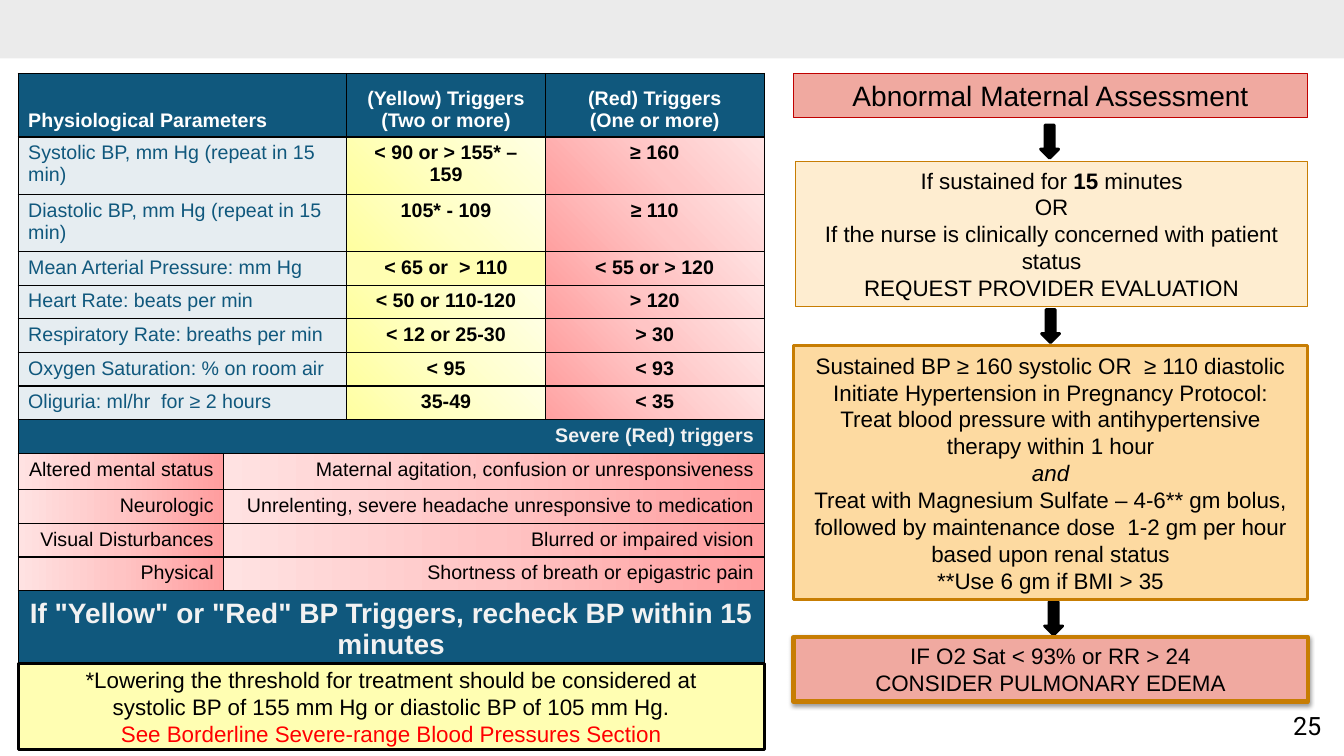
import pptx
import pptx.util
import pptx.dml.color
import pptx.enum.shapes
import pptx.enum.text
import pptx.oxml
import pptx.oxml.ns
from lxml import etree

Inches = pptx.util.Inches
Pt = pptx.util.Pt
RGB = pptx.dml.color.RGBColor
SHAPE = pptx.enum.shapes.MSO_SHAPE
ALIGN = pptx.enum.text.PP_ALIGN
ANCHOR = pptx.enum.text.MSO_ANCHOR
qn = pptx.oxml.ns.qn
NS = pptx.oxml.ns.nsdecls("a")

BLACK = RGB(0, 0, 0)
WHITE = RGB(255, 255, 255)
PALE = RGB(0xF2, 0xF2, 0xF2)
GREY = RGB(0xE3, 0xE3, 0xE3)
NAVY = RGB(0x10, 0x58, 0x7D)
RED = RGB(255, 0, 0)
WINE = RGB(0xC0, 0, 0)
ROSE = RGB(0xF0, 0xA9, 0xA0)
CREAM = RGB(0xFE, 0xED, 0xD0)
PEACH = RGB(0xFD, 0xDA, 0xA1)
AMBER = RGB(0xC7, 0x7D, 0x03)
LEMON = RGB(0xFF, 0xFE, 0xB2)

CIRCLE = '<a:path path="circle"><a:fillToRect l="0" t="100000" r="100000" b="0"/></a:path>'
GLOW = (("FFFFA0", "FFFFC5", "FFFFE3"), '<a:lin ang="18900000" scaled="0"/>')
ALARM = (("FFA0A0", "FFC5C5", "FFE3E3"), CIRCLE)
SEVERE = (("FF9D9E", "FFC4C4", "FFE2E2"), '<a:lin ang="10800000" scaled="0"/>')

HEAD = ("Physiological Parameters", "(Yellow) Triggers\n(Two or more)",
        "(Red) Triggers\n(One or more)")
VITALS = [
    ("Systolic BP, mm Hg (repeat in 15 min)", "< 90 or > 155* – 159", "≥ 160"),
    ("Diastolic BP, mm Hg (repeat in 15 min)", "105* - 109", "≥ 110"),
    ("Mean Arterial Pressure: mm Hg", "< 65 or  > 110", "< 55 or > 120"),
    ("Heart Rate: beats per min", "< 50 or 110-120", "> 120"),
    ("Respiratory Rate: breaths per min", "< 12 or 25-30", "> 30"),
    ("Oxygen Saturation: % on room air", "< 95", "< 93"),
    ("Oliguria: ml/hr  for ≥ 2 hours", "35-49", "< 35"),
]
SIGNS = [
    ("Altered mental status", "Maternal agitation, confusion or unresponsiveness"),
    ("Neurologic", "Unrelenting, severe headache unresponsive to medication"),
    ("Visual Disturbances", "Blurred or impaired vision"),
    ("Physical", "Shortness of breath or epigastric pain"),
]
RECHECK = 'If "Yellow" or "Red" BP Triggers, recheck BP within 15 minutes'


def fade(node, share):
    tone = next(node.iter(qn("a:srgbClr")))
    etree.SubElement(tone, qn("a:alpha")).set("val", str(share * 1000))


def write(para, text, size, color=BLACK, bold=False, italic=False, face="Arial"):
    run = para.add_run()
    run.text = text
    font = run.font
    font.name, font.size = face, Pt(size)
    font.bold, font.italic = bold, italic
    font.color.rgb = color


def lines(frame, rows, size, align=ALIGN.CENTER, **look):
    for i, row in enumerate(rows):
        para = frame.paragraphs[0] if i == 0 else frame.add_paragraph()
        para.alignment = align
        for part in [(row, {})] if isinstance(row, str) else row:
            write(para, part[0], size, **{**look, **part[1]})


def block(slide, kind, box, fill, line=None, width=0):
    shape = slide.shapes.add_shape(kind, *map(Inches, box))
    shape.shadow.inherit = False
    shape.fill.solid()
    shape.fill.fore_color.rgb = fill
    if line is None:
        shape.line.fill.background()
    else:
        shape.line.color.rgb = line
        shape.line.width = Pt(width)
    return shape


def panel(slide, box, fill, line, width, rows, size=16):
    shape = block(slide, SHAPE.RECTANGLE, box, fill, line, width)
    frame = shape.text_frame
    frame.word_wrap = True
    frame.vertical_anchor = ANCHOR.MIDDLE
    lines(frame, rows, size)
    return shape


def paint(cell, fill, share=100):
    props = cell._tc.get_or_add_tcPr()
    if isinstance(fill, RGB):
        cell.fill.solid()
        cell.fill.fore_color.rgb = fill
        if share < 100:
            fade(props, share)
    else:
        tones, way = fill
        stops = "".join(f'<a:gs pos="{i * 50000}"><a:srgbClr val="{tone}"/></a:gs>'
                        for i, tone in enumerate(tones))
        props.append(pptx.oxml.parse_xml(
            f'<a:gradFill {NS} rotWithShape="1"><a:gsLst>{stops}</a:gsLst>{way}</a:gradFill>'))


def border(cell):
    props = cell._tc.get_or_add_tcPr()
    for i, side in enumerate(("lnL", "lnR", "lnT", "lnB")):
        props.insert(i, pptx.oxml.parse_xml(
            f'<a:{side} {NS} w="12700"><a:solidFill><a:srgbClr val="{BLACK}"/>'
            f'</a:solidFill></a:{side}>'))


def grid(slide, box):
    table = slide.shapes.add_table(14, 4, *map(Inches, box)).table
    for col, width in zip(table.columns, (2.04, 1.22, 1.97, 2.17)):
        col.width = Inches(width)
    for i, row in enumerate(table.rows):
        row.height = Inches({0: 0.63, 9: 0.36, 13: 0.54}.get(i, 0.32))

    def put(row, first, last, text, fill, align=ALIGN.CENTER, size=14, share=100, **look):
        cell = table.cell(row, first)
        if last > first:
            cell.merge(table.cell(row, last))
        paint(cell, fill, share)
        lines(cell.text_frame, text.split("\n"), size, align, **look)
        return cell

    spans = ((0, 1, ALIGN.LEFT), (2, 2, ALIGN.CENTER), (3, 3, ALIGN.CENTER))
    for (first, last, align), text in zip(spans, HEAD):
        cell = put(0, first, last, text, NAVY, align, color=WHITE, bold=True)
        cell.vertical_anchor = ANCHOR.BOTTOM
    for row, (name, warn, stop) in enumerate(VITALS, 1):
        put(row, 0, 1, name, NAVY, ALIGN.LEFT, share=10, color=NAVY)
        put(row, 2, 2, warn, LEMON if row == 3 else GLOW, bold=True)
        put(row, 3, 3, stop, ALARM, bold=True)
    put(8, 0, 3, "Severe (Red) triggers", NAVY, ALIGN.RIGHT, color=PALE, bold=True)
    for row, (name, sign) in enumerate(SIGNS, 9):
        put(row, 0, 0, name, SEVERE, ALIGN.RIGHT)
        put(row, 1, 3, sign, SEVERE, ALIGN.RIGHT)
    cell = put(13, 0, 3, RECHECK, NAVY, size=20, color=PALE, bold=True)
    cell.vertical_anchor = ANCHOR.MIDDLE
    for cell in table.iter_cells():
        border(cell)


def flow(slide, box):
    x, y, w = box
    for left, top in ((2.45, 0.51), (2.46, 2.34), (2.49, 5.24)):
        block(slide, SHAPE.DOWN_ARROW, (x + left, y + top, 0.18, 0.33), BLACK, BLACK, 2)
    panel(slide, (x, y, w, 0.44), ROSE, WINE, 0.75, ["Abnormal Maternal Assessment"], 20)
    panel(slide, (x + 0.02, y + 0.87, w - 0.02, 1.44), CREAM, AMBER, 0.75, [
        [("If sustained for ", {}), ("15 ", {"bold": True}), ("minutes", {})],
        "OR",
        "If the nurse is clinically concerned with patient status",
        "REQUEST PROVIDER EVALUATION"])
    panel(slide, (x, y + 2.7, w, 2.52), PEACH, AMBER, 2, [
        "Sustained BP ≥ 160 systolic OR  ≥ 110 diastolic",
        "Initiate Hypertension in Pregnancy Protocol:",
        "Treat blood pressure with antihypertensive therapy within 1 hour",
        [("and", {"italic": True})],
        "Treat with Magnesium Sulfate – 4-6** gm bolus, followed by maintenance dose  "
        "1-2 gm per hour based upon renal status",
        "**Use 6 gm if BMI > 35"])
    last = panel(slide, (x, y + 5.59, w, 0.64), ROSE, AMBER, 3, [
        "IF O2 Sat < 93% or RR > 24", "CONSIDER PULMONARY EDEMA"])
    next(last.element.iter(qn("a:effectLst"))).append(pptx.oxml.parse_xml(
        f'<a:outerShdw {NS} blurRad="39370" dist="20320" dir="5400000" rotWithShape="0">'
        f'<a:srgbClr val="{BLACK}"><a:alpha val="38000"/></a:srgbClr></a:outerShdw>'))


def frame(slide):
    band = block(slide, SHAPE.RECTANGLE, (0, 0, 13.33, 0.58), GREY)
    fade(band.element.spPr, 70)
    page = slide.shapes.add_textbox(*map(Inches, (12.71, 7, 0.51, 0.4)))
    page.text_frame.word_wrap = False
    lines(page.text_frame, ["25"], 18, face="Roboto")


def main():
    deck = pptx.Presentation()
    deck.slide_width, deck.slide_height = Inches(13.33), Inches(7.5)
    slide = deck.slides.add_slide(deck.slide_layouts[6])
    frame(slide)
    grid(slide, (0.18, 0.73, 7.4, 5.9))
    flow(slide, (7.87, 0.73, 5.1))
    panel(slide, (0.18, 6.58, 7.4, 0.86), LEMON, BLACK, 2, [
        "*Lowering the threshold for treatment should be considered at",
        "systolic BP of 155 mm Hg or diastolic BP of 105 mm Hg.",
        [("See Borderline Severe-range Blood Pressures Section", {"color": RED})]])
    deck.save("out.pptx")


if __name__ == "__main__":
    main()
